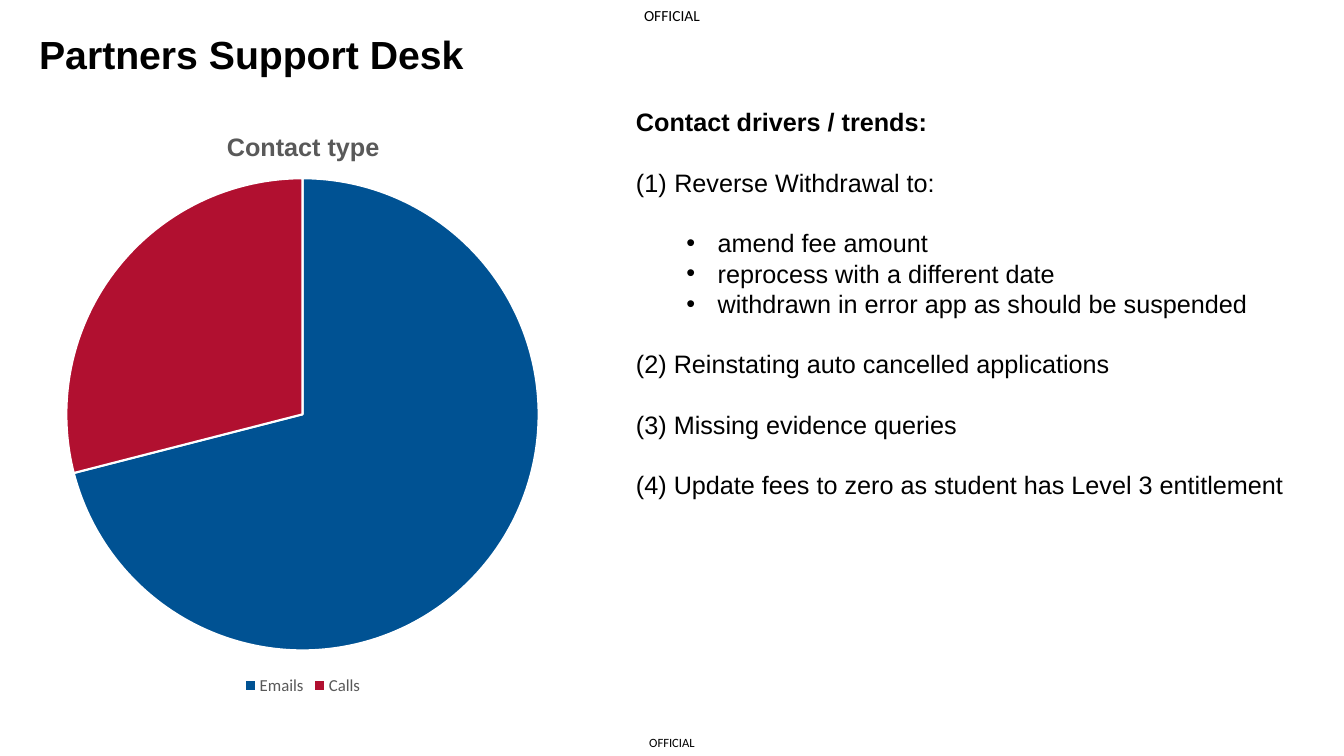
from lxml.etree import SubElement
from pptx import Presentation
from pptx.chart.data import CategoryChartData
from pptx.dml.color import RGBColor
from pptx.enum.chart import XL_CHART_TYPE, XL_LEGEND_POSITION
from pptx.enum.text import MSO_ANCHOR, PP_ALIGN
from pptx.oxml import parse_xml
from pptx.oxml.ns import nsdecls, qn
from pptx.util import Inches, Pt

WIDTH, HEIGHT = 13.33, 7.5
BLACK, GREY, WHITE = "000000", "595959", "FFFFFF"
CONTACTS = {"Emails": (71, "005293"), "Calls": (29, "B11030")}
LINE = 21.6
NUMBERED = (0.38, -0.38, "buAutoNum", {"type": "arabicParenBoth"})
BULLETED = (0.81, -0.31, "buChar", {"char": "•"})
DRIVERS = [
    ("Contact drivers / trends:", None, False),
    ("Reverse Withdrawal to:", NUMBERED, True),
    ("amend fee amount", BULLETED, True),
    ("reprocess with a different date", BULLETED, False),
    ("withdrawn in error app as should be suspended", BULLETED, False),
    ("(2) Reinstating auto cancelled applications", None, True),
    ("(3) Missing evidence queries", None, True),
    ("(4) Update fees to zero as student has Level 3 entitlement", None, True),
]


def rgb(value):
    """Turn a hex string into a colour."""
    return RGBColor.from_string(value)


def set_font(font, size, name="Arial", color=BLACK, bold=False):
    """Apply size, typeface, colour and weight to a font."""
    font.size, font.name, font.bold = Pt(size), name, bold
    font.color.rgb = rgb(color)


def add_box(s, left, top, width, height):
    """Add a wrapping text box and return its text frame."""
    sp = s.shapes.add_textbox(*map(Inches, (left, top, width, height)))
    tf = sp.text_frame
    tf.word_wrap = True
    return tf


def add_marking(s, top, width, height, size):
    """Add a centred classification marking."""
    tf = add_box(s, (WIDTH - width) / 2, top, width, height)
    tf.margin_left = tf.margin_right = tf.margin_top = tf.margin_bottom = 0
    tf.vertical_anchor = MSO_ANCHOR.MIDDLE
    tf.text = "OFFICIAL"
    p = tf.paragraphs[0]
    p.alignment = PP_ALIGN.CENTER
    set_font(p.runs[0].font, size, "Calibri")


def add_title(s, text):
    """Add the slide heading."""
    tf = add_box(s, 0.29, 0.3, 11.5, 0.71)
    tf.text = text
    p = tf.paragraphs[0]
    p.line_spacing = 0.9
    set_font(p.runs[0].font, 28, bold=True)


def set_bullet(p, left, indent, tag, attrs):
    """Give a paragraph a hanging bullet or number."""
    pPr = p._p.get_or_add_pPr()
    pPr.set("marL", str(Inches(left)))
    pPr.set("indent", str(Inches(indent)))
    SubElement(pPr, qn("a:buFont"), typeface="Arial")
    SubElement(pPr, qn(f"a:{tag}"), **attrs)


def add_drivers(s):
    """Add the list of contact drivers under its bold heading."""
    tf = add_box(s, 6.21, 1.01, 6.83, 5.55)
    for i, (text, bullet, gap) in enumerate(DRIVERS):
        p = tf.add_paragraph() if i else tf.paragraphs[0]
        p.text = text
        if bullet:
            set_bullet(p, *bullet)
        p.line_spacing = Pt(LINE)
        p.space_before = Pt(LINE if gap else 0)
        set_font(p.runs[0].font, 18, bold=i == 0)


def place(parent, index, **shares):
    """Fix a chart part at shares of the chart's size."""
    for old in parent.findall(qn("c:layout")):
        parent.remove(old)
    modes = '<c:xMode val="edge"/><c:yMode val="edge"/>'
    if "w" in shares:
        modes = '<c:layoutTarget val="inner"/>' + modes
    sizes = "".join(f'<c:{k} val="{v}"/>' for k, v in shares.items())
    parent.insert(index, parse_xml(
        f'<c:layout {nsdecls("c")}><c:manualLayout>{modes}{sizes}'
        "</c:manualLayout></c:layout>"))


def add_pie(s):
    """Add the pie of contact types with title and legend."""
    data = CategoryChartData()
    data.categories = list(CONTACTS)
    data.add_series("Series 1", [value for value, _ in CONTACTS.values()])
    box = map(Inches, (-1.44, 1.01, 8.89, 5.93))
    chart = s.shapes.add_chart(XL_CHART_TYPE.PIE, *box, data).chart
    set_font(chart.font, 10, "Calibri")

    chart.has_title = True
    tf = chart.chart_title.text_frame
    tf.text = "Contact type"
    set_font(tf.paragraphs[0].runs[0].font, 18, color=GREY, bold=True)
    place(chart.element.xpath("c:chart/c:title")[0], 1, x=0.41, y=0.04)
    place(chart.element.xpath("c:chart/c:plotArea")[0], 0,
          x=0.236, y=0.128, w=0.527, h=0.79)

    chart.has_legend = True
    chart.legend.position = XL_LEGEND_POSITION.BOTTOM
    chart.legend.include_in_layout = False
    set_font(chart.legend.font, 12, "Calibri", GREY)

    plot = chart.plots[0]
    plot.vary_by_categories = True
    for i, (_, color) in enumerate(CONTACTS.values()):
        slice_format = plot.series[0].points[i].format
        slice_format.fill.solid()
        slice_format.fill.fore_color.rgb = rgb(color)
        slice_format.line.color.rgb = rgb(WHITE)
        slice_format.line.width = Pt(1.5)


def main():
    """Build the support desk slide and save it."""
    prs = Presentation()
    prs.slide_width, prs.slide_height = Inches(WIDTH), Inches(HEIGHT)
    s = prs.slides.add_slide(prs.slide_layouts[6])
    add_marking(s, 0, 0.87, 0.31, 11)
    add_marking(s, HEIGHT - 0.27, 0.73, 0.27, 9)
    add_title(s, "Partners Support Desk")
    add_pie(s)
    add_drivers(s)
    prs.save("out.pptx")


if __name__ == "__main__":
    main()
